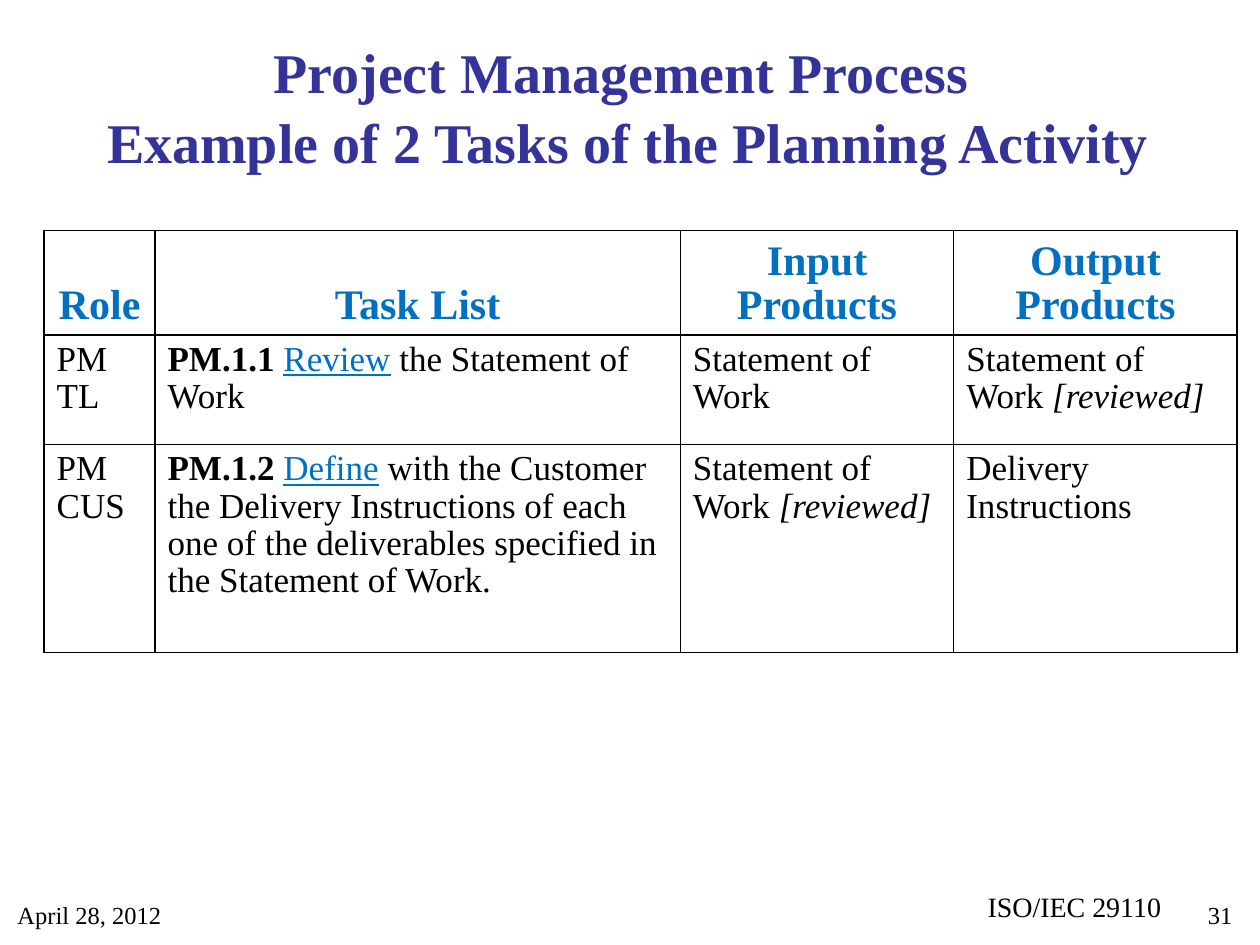
from lxml import etree
from pptx import Presentation
from pptx.dml.color import RGBColor
from pptx.enum.text import MSO_ANCHOR, PP_ALIGN
from pptx.oxml.ns import qn
from pptx.util import Inches, Pt

LEFT, CENTER, RIGHT = PP_ALIGN.LEFT, PP_ALIGN.CENTER, PP_ALIGN.RIGHT
TOP, MIDDLE, BOTTOM = MSO_ANCHOR.TOP, MSO_ANCHOR.MIDDLE, MSO_ANCHOR.BOTTOM
WIDTH, HEIGHT = 10, 7.5
NAVY, BLUE, BLACK, WHITE = "333399", "0070C0", "000000", "FFFFFF"
BREAK = "\v"

TITLE_FONT = {"size": Pt(32), "bold": True, "color": NAVY}
HEAD_FONT = {"size": Pt(24), "bold": True, "color": BLUE}
BODY_FONT = {"size": Pt(20), "color": BLACK}
BOLD = {"bold": True}
LINKED = {"underline": True, "color": BLUE}
ITALIC = {"italic": True}

COLUMNS = [0.88, 4.17, 2.17, 2.25]
ROWS = [0.83, 0.87, 1.65]
REVIEWED = ["Statement of", [("Work ", {}), ("[reviewed]", ITALIC)]]
HEADINGS = [["Role"], ["Task List"], ["Input", "Products"], ["Output", "Products"]]
TASKS = [
    [
        ["PM", "TL"],
        [[("PM.1.1 ", BOLD), ("Review", LINKED), (" the Statement of", {})], "Work"],
        ["Statement of", "Work"],
        REVIEWED,
    ],
    [
        ["PM", "CUS"],
        [
            [("PM.1.2 ", BOLD), ("Define", LINKED), (" with the Customer", {})],
            "the Delivery Instructions of each",
            "one of the deliverables specified in",
            "the Statement of Work.",
        ],
        REVIEWED,
        ["Delivery", "Instructions"],
    ],
]


def rgb(value):
    """Turn a hex string into a colour."""
    return RGBColor.from_string(value)


def place(shape, box):
    """Set a shape's left, top, width and height from a box in inches."""
    for name, value in zip(("left", "top", "width", "height"), box):
        setattr(shape, name, Inches(value))


def write_span(para, text, style):
    """Add one formatted run to a paragraph."""
    span = para.add_run()
    span.text = text
    for name, value in {"name": "Times New Roman", **style}.items():
        if name == "color":
            span.font.color.rgb = rgb(value)
        else:
            setattr(span.font, name, value)


def write_lines(frame, lines, style, align=LEFT, spacing=1.0, hanging=0):
    """Write each line, a string or a list of spans, as a paragraph."""
    for index, line in enumerate(lines):
        para = frame.paragraphs[0] if index == 0 else frame.add_paragraph()
        para.alignment, para.line_spacing = align, spacing
        if hanging:
            properties = para._p.get_or_add_pPr()
            properties.set("marL", str(Inches(hanging)))
            properties.set("indent", str(-Inches(hanging)))
        for text, extra in [(line, {})] if isinstance(line, str) else line:
            if text == BREAK:
                para.add_line_break()
            else:
                write_span(para, text, {**style, **extra})


def border_cell(cell, color, points):
    """Draw a solid line on all four sides of a cell."""
    properties = cell._tc.get_or_add_tcPr()
    for side in ("lnL", "lnR", "lnT", "lnB"):
        line = etree.SubElement(properties, qn(f"a:{side}"), w=str(Pt(points)))
        fill = etree.SubElement(line, qn("a:solidFill"))
        etree.SubElement(fill, qn("a:srgbClr"), val=color)


def add_title(page, box):
    """Fill the title placeholder with its two lines."""
    title = page.shapes.title
    place(title, box)
    title.text_frame.word_wrap = True
    title.text_frame.vertical_anchor = MIDDLE
    line = [
        ("Project Management Process ", {}),
        (BREAK, {}),
        ("Example of 2 Tasks of the Planning Activity", {}),
    ]
    write_lines(title.text_frame, [line], TITLE_FONT, CENTER, 1.04)


def add_task_table(page, box):
    """Build the table of tasks with its heading row."""
    grid = [HEADINGS, *TASKS]
    frame = page.shapes.add_table(len(ROWS), len(COLUMNS), *map(Inches, box))
    table = frame.table
    table.first_row = table.horz_banding = False
    for column, width in zip(table.columns, COLUMNS):
        column.width = Inches(width)
    for row, height, contents in zip(table.rows, ROWS, grid):
        row.height = Inches(height)
        heading = contents is HEADINGS
        for cell, lines in zip(row.cells, contents):
            border_cell(cell, BLACK, 1)
            cell.fill.solid()
            cell.fill.fore_color.rgb = rgb(WHITE)
            cell.vertical_anchor = BOTTOM if heading else TOP
            style, align = (HEAD_FONT, CENTER) if heading else (BODY_FONT, LEFT)
            write_lines(cell.text_frame, lines, style, align, 0.96, 0.38)


def add_note(page, box, text, size, align=LEFT, wrap=True):
    """Add one line of footer text."""
    frame = page.shapes.add_textbox(*map(Inches, box)).text_frame
    frame.word_wrap = wrap
    write_lines(frame, [text], {"size": Pt(size), "color": BLACK}, align)


def add_footer(page, top):
    """Place the date, page number and standard name along the bottom."""
    add_note(page, (0.04, top, 2.33, 0.4), "April 28, 2012", 14)
    add_note(page, (7.55, top, 2.33, 0.4), "31", 14, RIGHT)
    add_note(page, (7.74, top - 0.08, 1.59, 0.37), "ISO/IEC 29110", 16, wrap=False)


def main():
    """Build and save the slide."""
    deck = Presentation()
    deck.slide_width, deck.slide_height = Inches(WIDTH), Inches(HEIGHT)
    page = deck.slides.add_slide(deck.slide_layouts[5])
    add_title(page, (0.16, 0.21, 9.65, 1.25))
    add_task_table(page, (0.35, 1.83, sum(COLUMNS), sum(ROWS)))
    add_footer(page, 7.09)
    deck.save("out.pptx")


if __name__ == "__main__":
    main()
